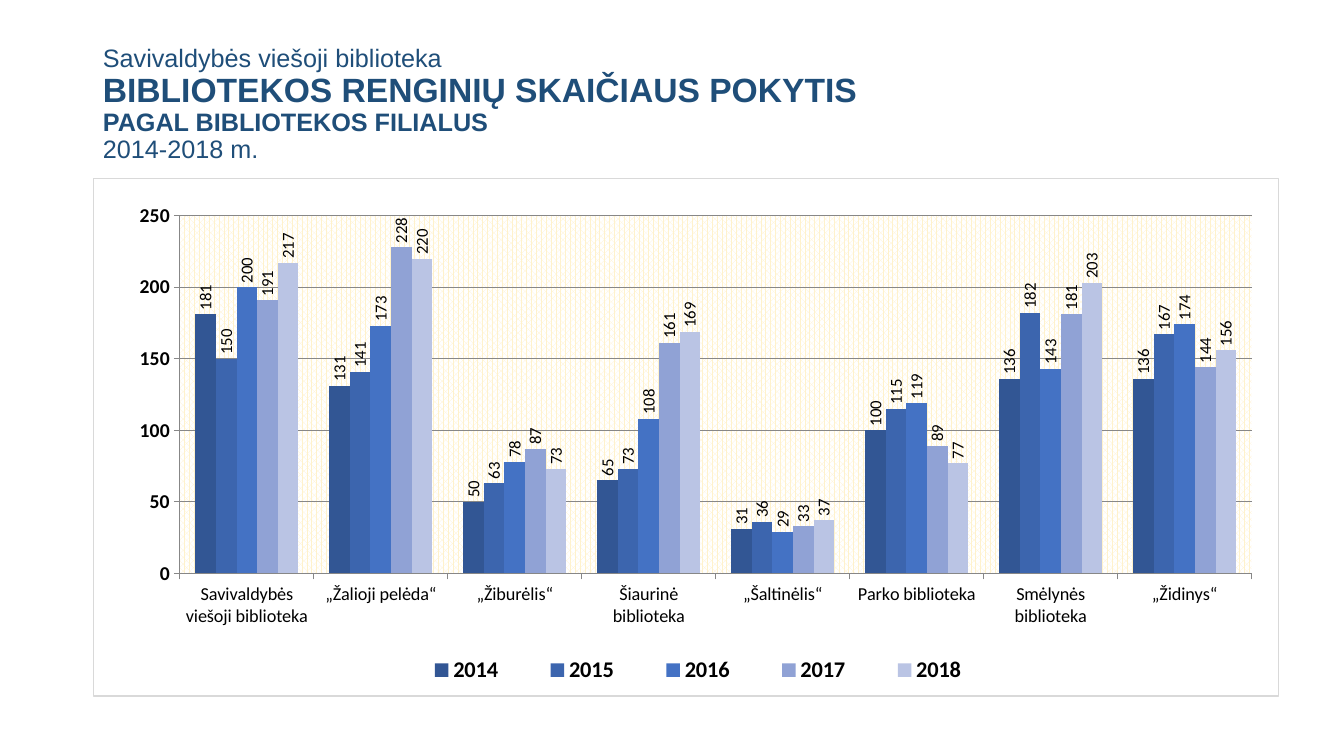
from lxml import etree
from pptx import Presentation
from pptx import util as u
from pptx.chart.data import CategoryChartData
from pptx.dml.color import RGBColor
from pptx.enum import chart as ch, text
from pptx.oxml import parse_xml
from pptx.oxml.ns import nsdecls, qn

HEADING = [
    ("Savivaldybės viešoji biblioteka", 18, False),
    ("BIBLIOTEKOS RENGINIŲ SKAIČIAUS POKYTIS", 24, True),
    ("PAGAL BIBLIOTEKOS FILIALUS", 18, True),
    ("2014-2018 m.", 18, False),
]
BRANCHES = ["Savivaldybės viešoji biblioteka", "„Žalioji pelėda“", "„Žiburėlis“",
            "Šiaurinė biblioteka", "„Šaltinėlis“", "Parko biblioteka",
            "Smėlynės biblioteka", "„Židinys“"]
EVENTS = {
    "2014": ("325694", [181, 131, 50, 65, 31, 100, 136, 136]),
    "2015": ("3C65AE", [150, 141, 63, 73, 36, 115, 182, 167]),
    "2016": ("4472C4", [200, 173, 78, 108, 29, 119, 143, 174]),
    "2017": ("90A2D5", [191, 228, 87, 161, 33, 89, 181, 144]),
    "2018": ("BAC4E4", [217, 220, 73, 169, 37, 77, 203, 156]),
}


def rgb(code):
    """Turn a hex string into a colour."""
    return RGBColor.from_string(code)


def apply(target, **values):
    """Set each given attribute on the target."""
    for name, value in values.items():
        setattr(target, name, value)


def set_layout(parent, position, inner=False):
    """Place a chart part by fractions of the chart area."""
    for old in parent.findall(qn("c:layout")):
        parent.remove(old)
    layout = parse_xml(f'<c:layout {nsdecls("c")}><c:manualLayout/></c:layout>')
    entries = [("layoutTarget", "inner")] if inner else []
    entries += [("xMode", "edge"), ("yMode", "edge"), *zip("xywh", position)]
    for tag, value in entries:
        etree.SubElement(layout[0], qn(f"c:{tag}")).set("val", str(value))
    parent.insert(0 if inner else 1, layout)


class BranchSlide:
    """Hold the slide and its style, and add its elements."""

    ink, grid, black = "1F4E79", "878787", "000000"

    def __init__(self, deck):
        self.slide = deck.slides.add_slide(deck.slide_layouts[5])

    def style(self, font, size, bold=False, color=black, face="Calibri"):
        """Format a font."""
        apply(font, size=u.Pt(size), bold=bold, name=face)
        font.color.rgb = rgb(color)

    def heading(self, lines, box):
        """Fill and place the title."""
        title = self.slide.shapes.title
        apply(title, **dict(zip(("left", "top", "width", "height"), map(u.Inches, box))))
        frame = title.text_frame
        apply(frame, word_wrap=True, auto_size=text.MSO_AUTO_SIZE.NONE,
              vertical_anchor=text.MSO_ANCHOR.MIDDLE)
        for number, (words, size, bold) in enumerate(lines):
            line = frame.add_paragraph() if number else frame.paragraphs[0]
            apply(line, alignment=text.PP_ALIGN.LEFT, line_spacing=0.9,
                  space_before=u.Pt(0))
            run = line.add_run()
            run.text = words
            self.style(run.font, size, bold, self.ink, "Arial")

    def columns(self, branches, events, box):
        """Add the clustered column chart."""
        counts = CategoryChartData()
        counts.categories = branches
        for year, (_, values) in events.items():
            counts.add_series(year, values)
        chart = self.slide.shapes.add_chart(
            ch.XL_CHART_TYPE.COLUMN_CLUSTERED, *map(u.Inches, box), counts).chart
        self.style(chart.font, 10, face="Arial")
        apply(chart, has_title=False, has_legend=True)
        self.legend(chart.legend)
        self.axes(chart)
        plot = chart.plots[0]
        apply(plot, gap_width=150, overlap=0, vary_by_categories=False)
        for bars, (color, _) in zip(plot.series, events.values()):
            self.bars(bars, color)
        self.backdrop(chart.element)

    def legend(self, legend):
        """Format the row of years."""
        apply(legend, position=ch.XL_LEGEND_POSITION.BOTTOM, include_in_layout=False)
        self.style(legend.font, 16, True)
        set_layout(legend._element, (0.25, 0.91, 0.52, 0.08))

    def axes(self, chart):
        """Format both axes and the gridlines."""
        scale, names = chart.value_axis, chart.category_axis
        apply(scale, minimum_scale=0, maximum_scale=250, major_unit=50,
              has_major_gridlines=True)
        self.style(scale.tick_labels.font, 14, True)
        self.style(names.tick_labels.font, 13)
        for axis in (scale, names):
            axis.major_tick_mark = ch.XL_TICK_MARK.OUTSIDE
        for part in (scale, names, scale.major_gridlines):
            part.format.line.width = u.Pt(0.75)
            part.format.line.color.rgb = rgb(self.grid)

    def bars(self, bars, color):
        """Colour one year and turn its labels upright."""
        bars.format.fill.solid()
        bars.format.fill.fore_color.rgb = rgb(color)
        labels = bars.data_labels
        apply(labels, show_value=True, position=ch.XL_LABEL_POSITION.OUTSIDE_END)
        self.style(labels.font, 12)
        for body in bars._element.iter(qn("a:bodyPr")):
            apply_turn = {"rot": "-5400000", "vert": "horz"}
            body.attrib.update(apply_turn)

    def backdrop(self, root):
        """Add the patterned plot ground and the outer border."""
        area = root.find(".//" + qn("c:plotArea"))
        set_layout(area, (0.073, 0.071, 0.904, 0.692), inner=True)
        area.append(parse_xml(
            f'<c:spPr {nsdecls("c", "a")}><a:pattFill prst="pct70">'
            '<a:fgClr><a:srgbClr val="FFF2CC"/></a:fgClr>'
            '<a:bgClr><a:srgbClr val="FFFFFF"/></a:bgClr></a:pattFill></c:spPr>'))
        root.find(qn("c:txPr")).addprevious(parse_xml(
            f'<c:spPr {nsdecls("c", "a")}><a:solidFill><a:srgbClr val="FFFFFF"/>'
            '</a:solidFill><a:ln w="9525"><a:solidFill><a:srgbClr val="D9D9D9"/>'
            '</a:solidFill></a:ln></c:spPr>'))


def main():
    """Build and save the slide."""
    deck = Presentation()
    apply(deck, slide_width=u.Inches(13.33), slide_height=u.Inches(7.5))
    page = BranchSlide(deck)
    page.heading(HEADING, (0.92, 0.4, 11.5, 1.28))
    page.columns(BRANCHES, EVENTS, (0.92, 1.77, 11.77, 5.14))
    deck.save("out.pptx")


if __name__ == "__main__":
    main()
